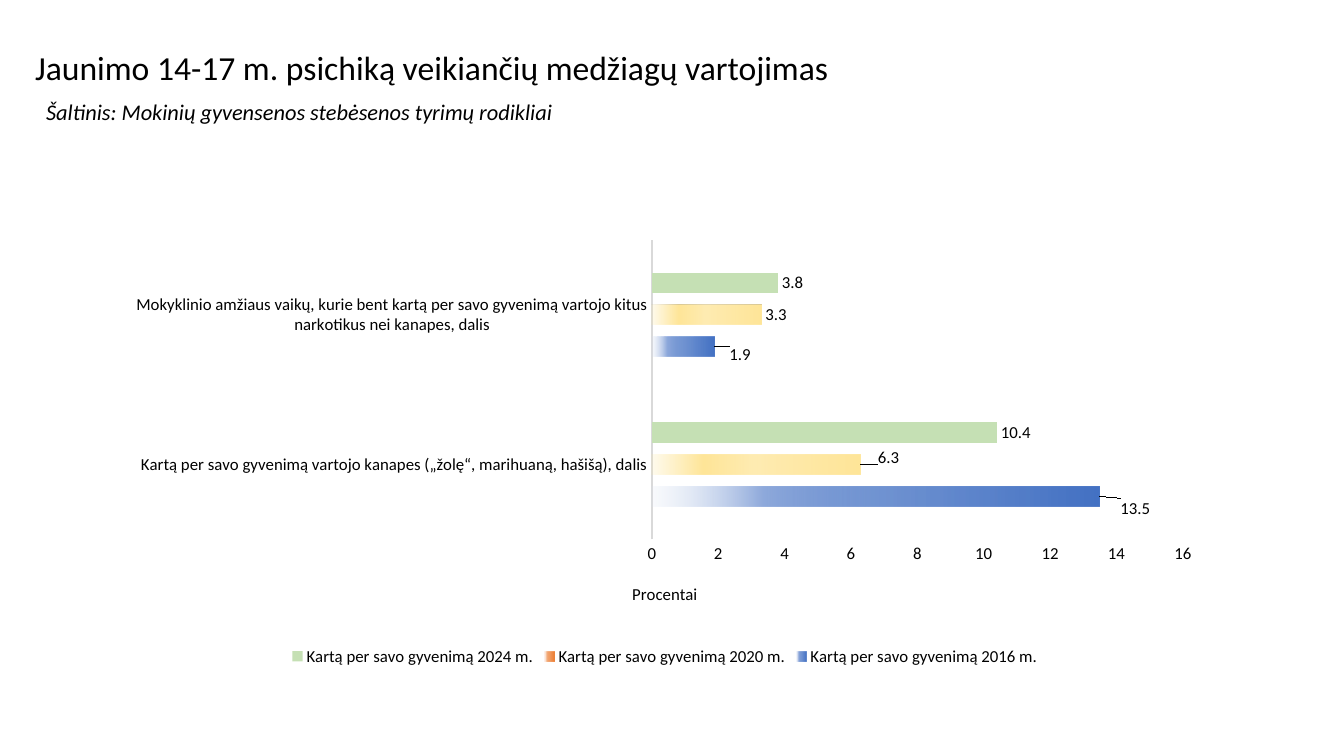
from pptx import Presentation
from pptx.chart.data import CategoryChartData
from pptx.dml.color import RGBColor
from pptx.enum import chart as ch, text
from pptx.oxml import parse_xml
from pptx.oxml.ns import nsdecls, qn
from pptx.util import Inches, Pt

FONT = "Calibri"
BLACK = RGBColor(0x00, 0x00, 0x00)
AXIS_GREY = RGBColor(0xD9, 0xD9, 0xD9)
GREEN = RGBColor(0xC5, 0xE0, 0xB4)
BLUES = [RGBColor.from_string(c) for c in ("4472C4", "4472C4", "8FAADC", "DAE3F3")]
ORANGES = [RGBColor.from_string(c) for c in ("ED7D31", "ED7D31", "F4B183", "FBE5D6")]
YELLOWS = [RGBColor(0xFF, 0xE6, 0x99)] * 4
FADE = [(0, 100), (51, 75), (75, 100), (100, 15)]  # position and opacity, percent

CATEGORIES = [
    "Kartą per savo gyvenimą vartojo kanapes („žolę“, marihuaną, hašišą), dalis",
    "Mokyklinio amžiaus vaikų, kurie bent kartą per savo gyvenimą vartojo "
    "kitus narkotikus nei kanapes, dalis",
]
SERIES = {2016: (13.5, 1.9), 2020: (6.3, 3.3), 2024: (10.4, 3.8)}
# Label shifts in percent of the chart size: (year, category index) -> (x, y)
LABEL_SHIFTS = {(2016, 0): (1.4, 2.5), (2016, 1): (0.9, 1.7), (2020, 0): (1.1, -1.5)}


def style_font(font, size, italic=False):
    font.name, font.size, font.italic, font.bold = FONT, Pt(size), italic, False
    font.color.rgb = BLACK


def add_heading(slide, box, words, size, anchor, italic=False):
    tf = slide.shapes.add_textbox(*map(Inches, box)).text_frame
    tf.word_wrap = True
    tf.vertical_anchor = anchor
    tf.text = words
    p = tf.paragraphs[0]
    p.line_spacing = 0.9
    style_font(p.runs[0].font, size, italic)


def fade_fill(fmt, colors):
    """Fill a series or point with a gradient that fades towards its left end."""
    fmt.fill.solid()
    stops = "".join(
        f'<a:gs pos="{pos * 1000}"><a:srgbClr val="{color}">'
        f'<a:alpha val="{alpha * 1000}"/></a:srgbClr></a:gs>'
        for color, (pos, alpha) in zip(colors, FADE))
    grad = parse_xml(f'<a:gradFill {nsdecls("a")} rotWithShape="1"><a:gsLst>{stops}'
                     '</a:gsLst><a:lin ang="10800000" scaled="0"/></a:gradFill>')
    solid = next(fmt._element.get_or_add_spPr().iter(qn("a:solidFill")))
    solid.getparent().replace(solid, grad)


def set_layout(element, index, **values):
    """Give a chart part a manual layout, placed as the child at index."""
    for old in element.findall(qn("c:layout")):
        element.remove(old)
    parts = "".join(f'<c:{tag} val="{val}"/>' for tag, val in values.items())
    element.insert(index, parse_xml(
        f'<c:layout {nsdecls("c")}><c:manualLayout>{parts}</c:manualLayout></c:layout>'))


def style_axes(chart):
    cat, val = chart.category_axis, chart.value_axis
    for axis in (cat, val):
        axis.major_tick_mark = axis.minor_tick_mark = ch.XL_TICK_MARK.NONE
        axis.has_major_gridlines = False
        style_font(axis.tick_labels.font, 12)
    cat.format.line.color.rgb = AXIS_GREY
    cat.format.line.width = Pt(1.5)
    val.format.line.fill.background()
    val.minimum_scale, val.maximum_scale, val.major_unit = 0, 16, 2
    val.tick_labels.number_format = "General"
    val.tick_labels.number_format_is_linked = False
    title = val.axis_title
    title.text_frame.text = "Procentai"
    style_font(title.text_frame.paragraphs[0].runs[0].font, 12)
    set_layout(title._element, 1, xMode="edge", yMode="edge", x=0.47, y=0.81)


def style_labels(series, year):
    labels = series.data_labels
    labels.show_value = True
    labels.position = ch.XL_LABEL_POSITION.OUTSIDE_END
    style_font(labels.font, 12)
    for (label_year, i), (dx, dy) in LABEL_SHIFTS.items():
        if label_year == year:
            label = series.points[i].data_label
            label.position = ch.XL_LABEL_POSITION.OUTSIDE_END
            style_font(label.font, 12)
            dlbl = labels._element.xpath(f'c:dLbl[c:idx/@val="{i}"]')[0]
            set_layout(dlbl, 1, x=dx / 100, y=dy / 100)


def add_usage_chart(slide, box):
    data = CategoryChartData(number_format="General")
    data.categories = CATEGORIES
    for year, values in SERIES.items():
        data.add_series(f"Kartą per savo gyvenimą {year} m.", values)
    chart = slide.shapes.add_chart(
        ch.XL_CHART_TYPE.BAR_CLUSTERED, *map(Inches, box), data).chart
    chart.has_title = False
    style_font(chart.font, 10)
    chart.has_legend = True
    chart.legend.position = ch.XL_LEGEND_POSITION.BOTTOM
    chart.legend.include_in_layout = False
    style_font(chart.legend.font, 12)
    style_axes(chart)

    plot = chart.plots[0]
    plot.gap_width, plot.overlap, plot.vary_by_categories = 326, -58, False
    set_layout(plot._element.getparent(), 0, layoutTarget="inner", xMode="edge",
               yMode="edge", x=0.489, y=0.095, w=0.446, h=0.63)
    for year, series in zip(SERIES, plot.series):
        style_labels(series, year)
    blue, orange, green = plot.series
    fade_fill(blue.format, BLUES)
    fade_fill(orange.format, ORANGES)
    for i in range(len(CATEGORIES)):
        fade_fill(orange.points[i].format, YELLOWS)
    green.format.fill.solid()
    green.format.fill.fore_color.rgb = GREEN


def main():
    prs = Presentation()
    prs.slide_width, prs.slide_height = Inches(13.33), Inches(7.5)
    slide = prs.slides.add_slide(prs.slide_layouts[6])
    add_heading(slide, (0.25, 0.19, 11.96, 1.01),
                "Jaunimo 14-17 m. psichiką veikiančių medžiagų vartojimas",
                24, text.MSO_ANCHOR.MIDDLE)
    add_usage_chart(slide, (0.69, 1.93, 11.81, 4.72))
    add_heading(slide, (0.36, 0.96, 11.96, 0.34),
                "Šaltinis: Mokinių gyvensenos stebėsenos tyrimų rodikliai",
                16, text.MSO_ANCHOR.TOP, italic=True)
    prs.save("out.pptx")


if __name__ == "__main__":
    main()
